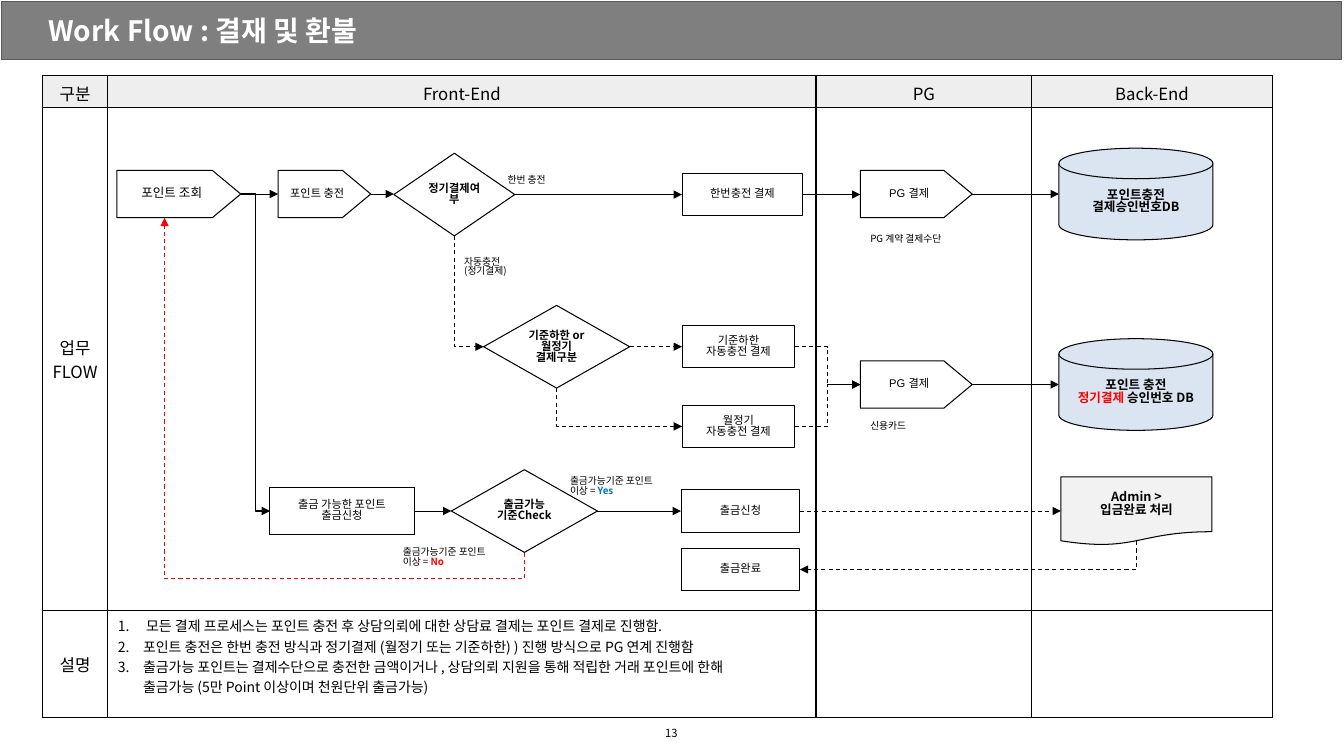
from lxml.etree import SubElement
from pptx import Presentation
from pptx.dml.color import RGBColor
from pptx.enum.dml import MSO_LINE
from pptx.enum.shapes import MSO_CONNECTOR, MSO_SHAPE
from pptx.enum.text import MSO_ANCHOR, PP_ALIGN
from pptx.oxml.ns import qn
from pptx.util import Inches, Pt

COLORS = {"black": "000000", "white": "FFFFFF", "red": "FF0000", "blue": "0070C0",
          "bar": "7F7F7F", "bar_edge": "595959", "head": "EEEEEE", "db": "DAE5F1", "doc": "F2F2F2"}
NOTO = "Noto Sans CJK KR"

TITLE = "Work Flow : 결재 및 환불"
PAGE = "13"
COLS = [0.65, 7.03, 2.14, 2.39]
ROWS = [0.32, 4.99, 1.06]
HEADS = ["구분", "Front-End", "PG", "Back-End"]
SIDES = ["업무\nFLOW", "설명"]
NOTES = "\n".join([
    " 모든 결제 프로세스는 포인트 충전 후 상담의뢰에 대한 상담료 결제는 포인트 결제로 진행함.",
    "포인트 충전은 한번 충전 방식과 정기결제 (월정기 또는 기준하한) ) 진행 방식으로 PG 연계 진행함",
    "출금가능 포인트는 결제수단으로 충전한 금액이거나 , 상담의뢰 지원을 통해 적립한 거래 포인트에 한해\v"
    "출금가능 (5만 Point 이상이며 천원단위 출금가능)",
])

# kind: shape, fill, side inset, bottom anchor as fractions of the box, text format
KINDS = {
    "plate": (MSO_SHAPE.PENTAGON, None, 0.1, (0.385, 1), dict(font="Arial")),
    "box": (MSO_SHAPE.FLOWCHART_PROCESS, None, 0.1, (0.5, 1), {}),
    "check": (MSO_SHAPE.FLOWCHART_DECISION, "white", 0.04, (0.5, 1), dict(bold=True)),
    "db": (MSO_SHAPE.FLOWCHART_MAGNETIC_DISK, "db", 0.1, (0.5, 1), dict(size=9, bold=True)),
    "doc": (MSO_SHAPE.FLOWCHART_DOCUMENT, "doc", 0.1, (0.5, 0.94), dict(size=9, bold=True)),
}
# name: kind, (left, top, width, height), text, extra format
NODES = {
    "lookup": ("plate", (1.16, 1.69, 1.23, 0.47), "포인트 조회", dict(size=9)),
    "charge": ("plate", (2.76, 1.69, 0.92, 0.47), "포인트 충전", {}),
    "regular": ("check", (3.91, 1.52, 1.2, 0.82), "정기결제여부", {}),
    "once": ("box", (6.77, 1.72, 1.2, 0.42), "한번충전 결제", {}),
    "pg_once": ("plate", (8.54, 1.69, 1.11, 0.47), "PG 결제", {}),
    "db_once": ("db", (10.51, 1.47, 1.53, 0.91), "포인트충전\v결제승인번호DB", {}),
    "basis": ("check", (4.8, 3.03, 1.45, 0.82), "기준하한 or\n월정기 결제구분", {}),
    "floor": ("box", (6.77, 3.23, 1.12, 0.42), "기준하한\v자동충전 결제", {}),
    "monthly": ("box", (6.77, 4.02, 1.12, 0.42), "월정기\v자동충전 결제", {}),
    "pg_auto": ("plate", (8.54, 3.58, 1.11, 0.47), "PG 결제", {}),
    "db_auto": ("db", (10.51, 3.36, 1.53, 0.91), "포인트 충전\v정기결제 승인번호 DB",
                dict(accent="정기결제", accent_color="red")),
    "withdraw": ("box", (2.68, 4.84, 1.43, 0.46), "출금 가능한 포인트\n출금신청", {}),
    "allowed": ("check", (4.48, 4.66, 1.45, 0.82), "출금가능\n기준Check", {}),
    "request": ("box", (6.76, 4.86, 1.18, 0.42), "출금신청", {}),
    "admin": ("doc", (10.53, 4.73, 1.5, 0.68), "Admin >\v입금완료 처리", {}),
    "done": ("box", (6.76, 5.44, 1.18, 0.42), "출금완료", {}),
}
# from, side, to, side, dashed
FLOWS = [
    ("lookup", "right", "charge", "left", False),
    ("lookup", "right", "withdraw", "left", False),
    ("charge", "right", "regular", "left", False),
    ("regular", "right", "once", "left", False),
    ("once", "right", "pg_once", "left", False),
    ("pg_once", "right", "db_once", "left", False),
    ("regular", "bottom", "basis", "left", True),
    ("basis", "right", "floor", "left", True),
    ("basis", "bottom", "monthly", "left", True),
    ("floor", "right", "pg_auto", "left", True),
    ("monthly", "right", "pg_auto", "left", True),
    ("pg_auto", "right", "db_auto", "left", False),
    ("withdraw", "right", "allowed", "left", False),
    ("allowed", "right", "request", "left", False),
    ("request", "right", "admin", "left", True),
    ("admin", "bottom", "done", "right", True),
    ("allowed", "bottom", "lookup", "bottom", True),
]
LABELS = [
    ((4.94, 1.68, 0.74, 0.22), "한번 충전", {}),
    ((4.51, 2.48, 0.74, 0.34), "자동충전\v(정기결제)", {}),
    ((8.54, 2.27, 1.28, 0.22), "PG 계약 결제수단", {}),
    ((8.54, 4.12, 1.28, 0.22), "신용카드", {}),
    ((5.56, 4.66, 1.21, 0.34), "출금가능기준 포인트\v이상 = Yes", dict(accent="Yes", accent_color="blue")),
    ((3.9, 5.36, 1.21, 0.34), "출금가능기준 포인트\v이상 = No", dict(accent="No", accent_color="red")),
]


def rgb(name):
    return RGBColor.from_string(COLORS[name])


def write(tf, text, size=8, color="black", bold=False, font=NOTO, align=PP_ALIGN.CENTER,
          spacing=0.82, accent=None, accent_color=None, numbered=False):
    """Fill a text frame: \\n starts a paragraph, \\v a line, accent is a bold coloured part."""
    for i, para in enumerate(text.split("\n")):
        p = tf.paragraphs[0] if i == 0 else tf.add_paragraph()
        p.alignment, p.line_spacing = align, spacing
        if numbered:
            pPr = p._p.get_or_add_pPr()
            pPr.set("marL", str(Inches(0.25)))
            pPr.set("indent", str(-Inches(0.25)))
            SubElement(pPr, qn("a:buAutoNum"), type="arabicPeriod")
        for j, line in enumerate(para.split("\v")):
            if j:
                p.add_line_break()
            for part in line.partition(accent) if accent else [line]:
                if not part:
                    continue
                hit = part == accent
                r = p.add_run()
                r.text = part
                r.font.size, r.font.name, r.font.bold = Pt(size), font, bold or hit
                r.font.color.rgb = rgb(accent_color if hit else color)
                SubElement(r._r.get_or_add_rPr(), qn("a:ea"), typeface=NOTO)


def frame(tf, x=0.1, y=0.05):
    tf.word_wrap, tf.vertical_anchor = True, MSO_ANCHOR.MIDDLE
    tf.margin_left = tf.margin_right = Inches(x)
    tf.margin_top = tf.margin_bottom = Inches(y)
    return tf


def add_text(slide, box, text, x=0.1, **fmt):
    write(frame(slide.shapes.add_textbox(*map(Inches, box)).text_frame, x), text, **fmt)


def add_box(slide, shape, box, fill, line="black"):
    sp = slide.shapes.add_shape(shape, *map(Inches, box))
    sp.shadow.inherit = False
    if fill:
        sp.fill.solid()
        sp.fill.fore_color.rgb = rgb(fill)
    else:
        sp.fill.background()
    sp.line.color.rgb, sp.line.width = rgb(line), Pt(0.75)
    return sp


def add_table(slide):
    sh = slide.shapes.add_table(3, 4, *map(Inches, (0.42, 0.75, sum(COLS), sum(ROWS))))
    table = sh.table
    table.first_row = table.horz_banding = False
    for sizes, lanes, side in ((COLS, table.columns, "width"), (ROWS, table.rows, "height")):
        for lane, size in zip(lanes, sizes):
            setattr(lane, side, Inches(size))
    for cell in table.iter_cells():
        cell.vertical_anchor = MSO_ANCHOR.MIDDLE
        for edge in ("lnL", "lnR", "lnT", "lnB"):
            ln = SubElement(cell._tc.get_or_add_tcPr(), qn("a:" + edge), w=str(Pt(1)))
            SubElement(SubElement(ln, qn("a:solidFill")), qn("a:srgbClr"), val=COLORS["black"])
        cell.fill.background()
    for c, head in enumerate(HEADS):
        cell = table.cell(0, c)
        cell.fill.solid()
        cell.fill.fore_color.rgb = rgb("head")
        write(cell.text_frame, head, size=12, spacing=1.0)
    for r, side in enumerate(SIDES, 1):
        write(table.cell(r, 0).text_frame, side, size=12, spacing=1.0)
    notes = table.cell(2, 1)
    notes.vertical_anchor = MSO_ANCHOR.TOP
    write(notes.text_frame, NOTES, size=10, align=PP_ALIGN.LEFT, spacing=1.0, numbered=True)


def anchor(name, side):
    kind, (x, y, w, h) = NODES[name][:2]
    fx, fy = {"left": (0, 0.5), "right": (1, 0.5), "bottom": KINDS[kind][3]}[side]
    return x + fx * w, y + fy * h


def connect(slide, start, side, end, end_side, dashed):
    """Join two nodes; a line leaving a bottom is a turned elbow."""
    (x1, y1), (x2, y2) = anchor(start, side), anchor(end, end_side)
    if side == "bottom":
        dx, dy = x2 - x1, y2 - y1
        w, h = abs(dy), abs(dx)
        left, top = (x1 + x2 - w) / 2, (y1 + y2 - h) / 2
        cn = slide.shapes.add_connector(MSO_CONNECTOR.ELBOW, *map(Inches, (left, top, left + w, top + h)))
        cn.rotation = 90 if dx < 0 else 270
        spPr = cn._element.spPr
        if (dx > 0) == (dy > 0):
            spPr.find(qn("a:xfrm")).set("flipH", "1")
        geom = spPr.find(qn("a:prstGeom"))
        if end_side == "bottom":
            SubElement(geom.find(qn("a:avLst")), qn("a:gd"), name="adj1", fmla="val -7900")
        else:
            geom.set("prst", "bentConnector2")
    else:
        straight = abs(y1 - y2) < 0.02
        kind = MSO_CONNECTOR.STRAIGHT if straight else MSO_CONNECTOR.ELBOW
        cn = slide.shapes.add_connector(kind, *map(Inches, (x1, y1, x2, y1 if straight else y2)))
    cn.line.color.rgb = rgb("red" if end_side == "bottom" else "black")
    cn.line.width = Pt(0.75)
    if dashed:
        cn.line.dash_style = MSO_LINE.DASH
    SubElement(cn.line._get_or_add_ln(), qn("a:tailEnd"), type="triangle")
    SubElement(cn._element.spPr, qn("a:effectLst"))


def main():
    prs = Presentation()
    prs.slide_width, prs.slide_height = Inches(13.34), Inches(7.5)
    slide = prs.slides.add_slide(prs.slide_layouts[6])
    add_box(slide, MSO_SHAPE.RECTANGLE, (0.02, 0.02, 13.3, 0.57), "bar", "bar_edge")
    add_text(slide, (0.29, 0, 12.76, 0.6), TITLE, x=0.19, size=20, color="white", bold=True,
             align=PP_ALIGN.LEFT, spacing=1.0)
    add_table(slide)
    add_text(slide, (0, 7.08, 13.33, 0.39), PAGE, spacing=1.0)
    for flow in FLOWS:
        connect(slide, *flow)
    for kind, box, text, extra in NODES.values():
        shape, fill, inset, _, fmt = KINDS[kind]
        sp = add_box(slide, shape, box, fill)
        if kind == "plate":
            sp.adjustments[0] = 0.6
        write(frame(sp.text_frame, inset), text, **{**fmt, **extra})
    for box, text, extra in LABELS:
        add_text(slide, box, text, size=7, align=PP_ALIGN.LEFT, **extra)
    prs.save("out.pptx")


if __name__ == "__main__":
    main()
